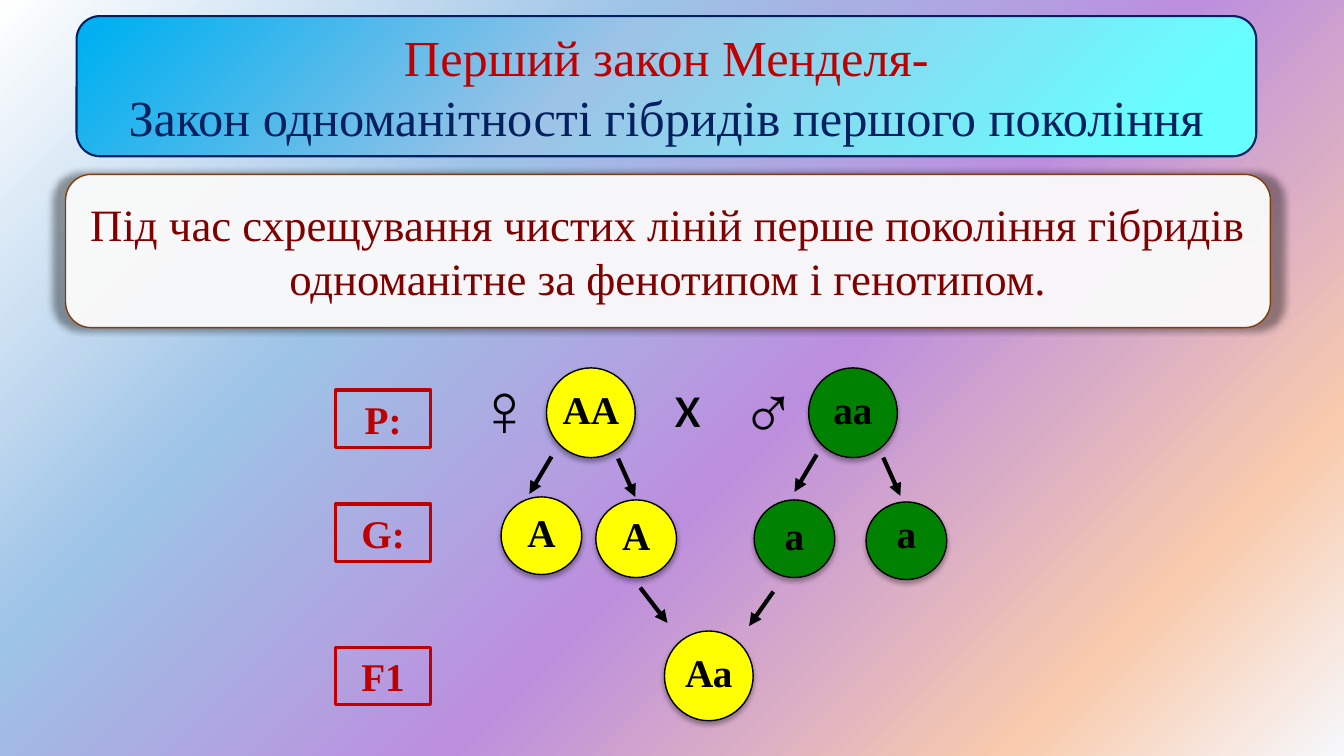
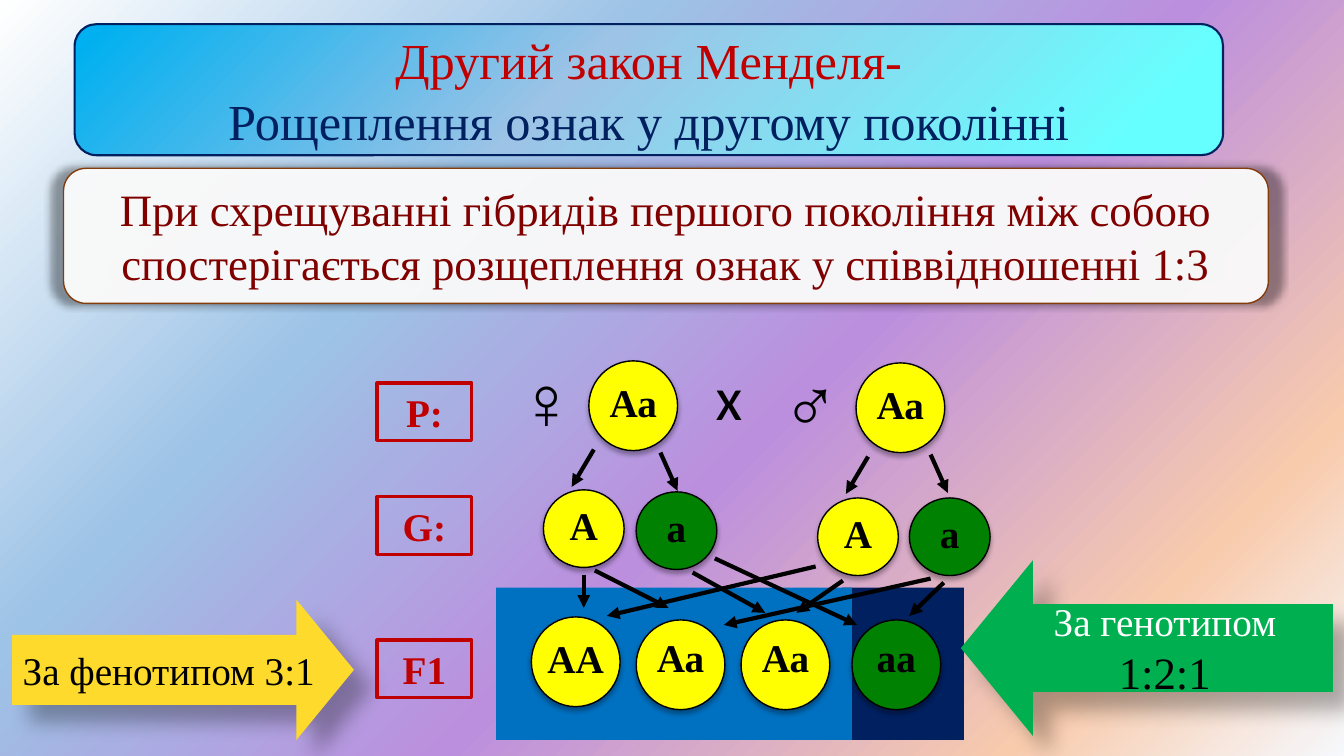
from lxml import etree
from pptx import Presentation
from pptx.dml.color import RGBColor
from pptx.enum.shapes import MSO_CONNECTOR, MSO_SHAPE
from pptx.enum.text import MSO_ANCHOR, PP_ALIGN
from pptx.oxml.ns import qn
from pptx.util import Inches, Pt

ROUNDED = MSO_SHAPE.ROUNDED_RECTANGLE
RECTANGLE = MSO_SHAPE.RECTANGLE
ELLIPSE = MSO_SHAPE.OVAL
LEFT_ARROW = MSO_SHAPE.LEFT_ARROW
RIGHT_ARROW = MSO_SHAPE.RIGHT_ARROW
STRAIGHT = MSO_CONNECTOR.STRAIGHT
CENTER, LEFT = PP_ALIGN.CENTER, PP_ALIGN.LEFT
MIDDLE, TOP = MSO_ANCHOR.MIDDLE, MSO_ANCHOR.TOP

SERIF, SANS = "Times New Roman", "Calibri"
BLACK, WHITE = "000000", "FFFFFF"
RED, NAVY, MAROON, BROWN = "C00000", "002060", "800000", "843C0B"
YELLOW, GREEN, BLUE = "FFFF01", "008101", "0070C0"
GOLD, EMERALD = "FEDA2C", "00B050"
PAGE_STOPS = [(0, "F6F8FC"), (16, "F8CBAD"), (43, "BC8FDE"), (69, "9DC3E6"), (100, WHITE)]
TITLE_STOPS = [(8, "66FFFF"), (57, "9DC3E6"), (98, "00B0F0")]

BIG, SMALL = (0.88, 0.89), (0.8, 0.77)
LOW_RISE, HIGH_RISE = 0.04, 0.08


def color(value):
    return RGBColor.from_string(value)


def add_xml(parent, tag, **attributes):
    return etree.SubElement(parent, qn(tag), {key: str(value) for key, value in attributes.items()})


def set_gradient(fill, owner, stops):
    fill.solid()
    solid = owner.find(qn("a:solidFill"))
    gradient = etree.Element(qn("a:gradFill"), rotWithShape="1")
    stop_list = add_xml(gradient, "a:gsLst")
    for position, value in stops:
        stop = add_xml(stop_list, "a:gs", pos=position * 1000)
        add_xml(stop, "a:srgbClr", val=value)
    circle = add_xml(gradient, "a:path", path="circle")
    add_xml(circle, "a:fillToRect", l=100000, t=100000)
    owner.replace(solid, gradient)


def set_shadow(shape, alpha, blur, distance=0, angle=0, scale=100):
    effects = shape.element.spPr.find(qn("a:effectLst"))
    shadow = add_xml(effects, "a:outerShdw", blurRad=Pt(blur), dist=Pt(distance),
                     dir=angle * 60000, sx=scale * 1000, sy=scale * 1000,
                     algn="ctr", rotWithShape=0)
    tint = add_xml(shadow, "a:srgbClr", val=BLACK)
    add_xml(tint, "a:alpha", val=alpha * 1000)


def add_block(slide, kind, box, fill=None, line=None, width=1):
    shape = slide.shapes.add_shape(kind, *map(Inches, box))
    shape.shadow.inherit = False
    if fill:
        shape.fill.solid()
        shape.fill.fore_color.rgb = color(fill)
    else:
        shape.fill.background()
    if line:
        shape.line.color.rgb = color(line)
        shape.line.width = Pt(width)
    else:
        shape.line.fill.background()
    return shape


def format_run(run, size, value, bold=False, font=SERIF):
    run.font.size = Pt(size)
    run.font.name = font
    run.font.bold = bold
    run.font.color.rgb = color(value)


def write(shape, text, size, colors, bold=False, font=SERIF, align=CENTER, anchor=MIDDLE):
    frame = shape.text_frame
    frame.word_wrap = True
    frame.vertical_anchor = anchor
    frame.text = text
    for paragraph, value in zip(frame.paragraphs, colors):
        paragraph.alignment = align
        for run in paragraph.runs:
            format_run(run, size, value, bold, font)
    return frame


def add_arrow(slide, start, end):
    arrow = slide.shapes.add_connector(STRAIGHT, *map(Inches, (*start, *end)))
    arrow.line.color.rgb = color(BLACK)
    arrow.line.width = Pt(3)
    add_xml(arrow.line._get_or_add_ln(), "a:tailEnd", type="triangle")
    add_xml(arrow.element.spPr, "a:effectLst")


def add_circle(slide, genotype, left, top, size=BIG, rise=LOW_RISE):
    fill = GREEN if genotype.islower() else YELLOW
    circle = add_block(slide, ELLIPSE, (left, top, *size), fill, BLACK)
    set_shadow(circle, 32, 3.5, 2.2, 90)
    frame = write(circle, genotype, 28, [BLACK], bold=True)
    frame.word_wrap = False
    frame.margin_left = frame.margin_right = frame.margin_top = 0
    frame.margin_bottom = Inches(2 * rise)


def add_title(slide, box, law, summary):
    title = add_block(slide, ROUNDED, box, WHITE, NAVY, 1.5)
    set_gradient(title.fill, title.element.spPr, TITLE_STOPS)
    colors = [RED, NAVY]
    frame = write(title, f"{law}\n{summary}", 36, colors)
    for paragraph, value in zip(frame.paragraphs, colors):
        outline = etree.Element(qn("a:ln"), w=str(Pt(0.75)))
        add_xml(add_xml(outline, "a:solidFill"), "a:srgbClr", val=value)
        paragraph.runs[0].font._element.insert(0, outline)


def add_statement(slide, box, text):
    statement = add_block(slide, ROUNDED, box, WHITE, BROWN)
    tint = statement.element.spPr.find(qn("a:solidFill"))[0]
    add_xml(tint, "a:alpha", val=94000)
    set_shadow(statement, 40, 5, scale=102)
    write(statement, text, 32, [MAROON])


def add_symbol(slide, text, box, size, bold=True, font=SERIF, align=LEFT):
    symbol = slide.shapes.add_textbox(*map(Inches, box))
    write(symbol, text, size, [BLACK], bold, font, align, TOP)


def add_scheme(slide, left, top):
    for text, offset in (("P:", 0.34), ("G:", 1.47), ("F1", 2.89)):
        label = add_block(slide, RECTANGLE, (left, top + offset, 0.94, 0.57), None, RED, 2.25)
        write(label, text, 28, [RED], bold=True, anchor=TOP)
    add_symbol(slide, "♀", (left + 1.3, top, 0.3, 1.01), 54)
    add_symbol(slide, "х", (left + 3.02, top + 0.05, 0.94, 0.84), 44, False, SANS, CENTER)
    add_symbol(slide, "♂", (left + 3.92, top + 0.03, 0.88, 1.01), 54)


def add_family(slide, left, top, genotype, gametes, arrow_starts):
    add_circle(slide, genotype, left, top)
    for allele, across, down, rise in gametes:
        add_circle(slide, allele, left + across, top + down, SMALL, rise)
    for (across, down), (run, drop) in zip(arrow_starts, ((-0.22, 0.37), (0.17, 0.38))):
        start = left + across, top + down
        add_arrow(slide, start, (start[0] + run, start[1] + drop))


def add_ratio(slide, kind, box, fill, runs):
    arrow = add_block(slide, kind, box, fill)
    arrow.adjustments[0] = 0.5
    arrow.adjustments[1] = 0.41
    set_shadow(arrow, 30, 15, 18, 45)
    frame = write(arrow, "", 28, [BLACK])
    for text, size, value in runs:
        run = frame.paragraphs[0].add_run()
        run.text = text
        format_run(run, size, value)


def add_page(presentation):
    slide = presentation.slides.add_slide(presentation.slide_layouts[6])
    fill = slide.background.fill
    fill.solid()
    set_gradient(fill, slide.element.find(".//" + qn("p:bgPr")), PAGE_STOPS)
    return slide


def build_first_law(presentation):
    slide = add_page(presentation)
    add_statement(slide, (0.65, 1.73, 11.95, 1.52),
                  "Під час схрещування чистих ліній перше покоління гібридів "
                  "одноманітне за фенотипом і генотипом.")
    add_title(slide, (0.76, 0.16, 11.7, 1.39), "Перший закон Менделя-",
              "Закон одноманітності гібридів першого покоління")
    add_scheme(slide, 3.33, 3.53)
    add_family(slide, 5.42, 3.65, "АА",
               [("А", -0.45, 1.28, LOW_RISE), ("А", 0.49, 1.31, LOW_RISE)],
               [(0.05, 0.88), (0.71, 0.9)])
    add_family(slide, 8.02, 3.65, "аа",
               [("а", -0.54, 1.31, LOW_RISE), ("а", 0.57, 1.33, HIGH_RISE)],
               [(0.08, 0.86), (0.74, 0.89)])
    add_circle(slide, "Аа", 6.59, 6.26)
    add_arrow(slide, (6.35, 5.83), (6.62, 6.18))
    add_arrow(slide, (7.67, 5.87), (7.43, 6.21))


def add_offspring(slide, left, top):
    offspring = [("АА", 0, 0, LOW_RISE), ("Аа", 1.04, 0.03, HIGH_RISE),
                 ("Аа", 2.08, 0.03, HIGH_RISE), ("аа", 3.18, 0.03, HIGH_RISE)]
    for genotype, across, down, rise in offspring:
        add_circle(slide, genotype, left + across, top + down, BIG, rise)
    routes = [((0.52, -0.42), (0.52, -0.09)), ((2.82, -0.5), (0.75, -0.01)),
              ((0.63, -0.46), (1.36, -0.09)), ((3.96, -0.38), (1.91, 0.08)),
              ((1.6, -0.44), (2.32, -0.04)), ((3.09, -0.36), (2.63, -0.04)),
              ((1.82, -0.58), (3.23, 0.08)), ((4.09, -0.34), (3.75, -0.01))]
    for route in routes:
        add_arrow(slide, *((left + across, top + down) for across, down in route))


def build_second_law(presentation):
    slide = add_page(presentation)
    add_block(slide, RECTANGLE, (8.35, 5.83, 1.21, 1.51), NAVY)
    add_block(slide, RECTANGLE, (4.92, 5.83, 3.53, 1.51), BLUE)
    add_statement(slide, (0.63, 1.67, 11.95, 1.34),
                  "При схрещуванні гібридів першого покоління між собою "
                  "спостерігається розщеплення ознак у співвідношенні 1:3")
    add_title(slide, (0.74, 0.24, 11.39, 1.3), "Другий закон Менделя-",
              "Рощеплення ознак у другому поколінні")
    add_ratio(slide, LEFT_ARROW, (9.53, 5.56, 3.69, 1.74), EMERALD,
              [("За генотипом ", 28, WHITE), ("1:2:1", 32, BLACK)])
    add_ratio(slide, RIGHT_ARROW, (0.12, 5.95, 3.39, 1.39), GOLD,
              [("За фенотипом 3:1", 28, BLACK)])
    add_scheme(slide, 3.74, 3.46)
    add_family(slide, 5.84, 3.58, "Аа",
               [("А", -0.45, 1.28, LOW_RISE), ("а", 0.47, 1.3, LOW_RISE)],
               [(0.05, 0.88), (0.71, 0.91)])
    add_family(slide, 8.49, 3.6, "Аа",
               [("А", -0.38, 1.34, LOW_RISE), ("а", 0.53, 1.34, LOW_RISE)],
               [(0.12, 0.93), (0.74, 0.91)])
    add_offspring(slide, 5.27, 6.12)


def main():
    presentation = Presentation()
    presentation.slide_width = Inches(13.33)
    presentation.slide_height = Inches(7.5)
    build_first_law(presentation)
    build_second_law(presentation)
    presentation.save("out.pptx")


if __name__ == "__main__":
    main()
